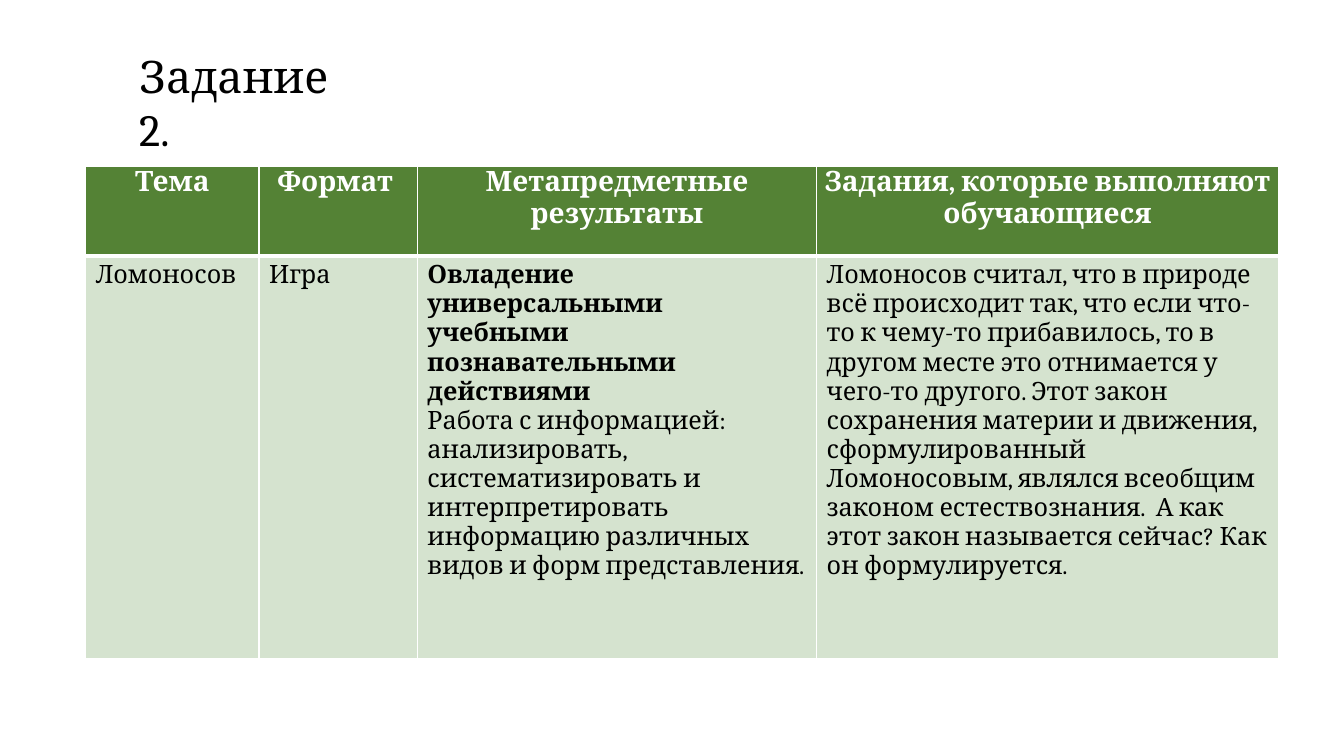
from dataclasses import dataclass
from lxml.etree import SubElement
from pptx import Presentation
from pptx.dml.color import RGBColor as RGB
from pptx.enum.text import MSO_ANCHOR as Anchor, MSO_AUTO_SIZE as Fit, PP_ALIGN as Align
from pptx.oxml.ns import qn
from pptx.util import Inches, Pt


@dataclass
class Theme:
    font: str = "Cambria"
    ink: str = "000000"
    white: str = "FFFFFF"
    head: str = "548235"
    body: str = "D5E3CF"
    title: int = 32
    label: int = 20
    text: int = 18


def add_run(par, text, size, color, bold=False):
    run = par.add_run()
    run.text = text
    font = run.font
    font.name, font.size, font.bold = theme.font, Pt(size), bold
    font.color.rgb = RGB.from_string(color)


def add_edges(cell, widths):
    props = cell._tc.get_or_add_tcPr()
    for side, width in widths.items():
        line = SubElement(props, qn(f"a:ln{side}"), w=str(Pt(width)))
        fill = SubElement(line, qn("a:solidFill"))
        SubElement(fill, qn("a:srgbClr"), val=theme.white)


theme = Theme()
cols = [1.72, 1.57, 3.96, 4.58]
rows = [0.89, 3.99]
heads = ["Тема", "Формат ", "Метапредметные результаты",
         "Задания, которые выполняют обучающиеся"]
bodies = [
    [("Ломоносов", False)],
    [("Игра", False)],
    [("Овладение универсальными учебными познавательными действиями", True),
     ("Работа с информацией: анализировать, систематизировать и интерпретировать "
      "информацию различных видов и форм представления.", False)],
    [("Ломоносов считал, что в природе всё происходит так, что если что-то к чему-то "
      "прибавилось, то в другом месте это отнимается у чего-то другого. Этот закон "
      "сохранения материи и движения, сформулированный Ломоносовым, являлся всеобщим "
      "законом естествознания.  А как этот закон называется сейчас? "
      "Как он формулируется.", False)],
]

prs = Presentation()
prs.slide_width, prs.slide_height = Inches(13.33), Inches(7.5)
slide = prs.slides.add_slide(prs.slide_layouts[5])

title = slide.shapes.title
title.left, title.top = Inches(1.28), Inches(0.43)
title.width, title.height = Inches(2.32), Inches(0.64)
frame = title.text_frame
frame.word_wrap, frame.auto_size = True, Fit.NONE
frame.vertical_anchor = Anchor.TOP
par = frame.paragraphs[0]
par.alignment = Align.LEFT
add_run(par, "Задание 2.", theme.title, theme.ink)

table = slide.shapes.add_table(len(rows), len(cols), Inches(0.85), Inches(1.65),
                               Inches(sum(cols)), Inches(sum(rows))).table
table.horz_banding = False
for row, height in zip(table.rows, rows):
    row.height = Inches(height)

for num, (width, head, body) in enumerate(zip(cols, heads, bodies)):
    table.columns[num].width = Inches(width)

    cell = table.cell(0, num)
    add_edges(cell, dict(L=1, R=1, T=1, B=3))
    cell.fill.solid()
    cell.fill.fore_color.rgb = RGB.from_string(theme.head)
    cell.margin_left = cell.margin_right = Inches(0.07)
    cell.margin_top = cell.margin_bottom = 0
    par = cell.text_frame.paragraphs[0]
    par.alignment = Align.CENTER
    add_run(par, head, theme.label, theme.white, True)

    cell = table.cell(1, num)
    add_edges(cell, dict(L=1, R=1, T=3, B=1))
    cell.fill.solid()
    cell.fill.fore_color.rgb = RGB.from_string(theme.body)
    frame = cell.text_frame
    for step, (text, bold) in enumerate(body):
        par = frame.add_paragraph() if step else frame.paragraphs[0]
        add_run(par, text, theme.text, theme.ink, bold)

prs.save("out.pptx")
